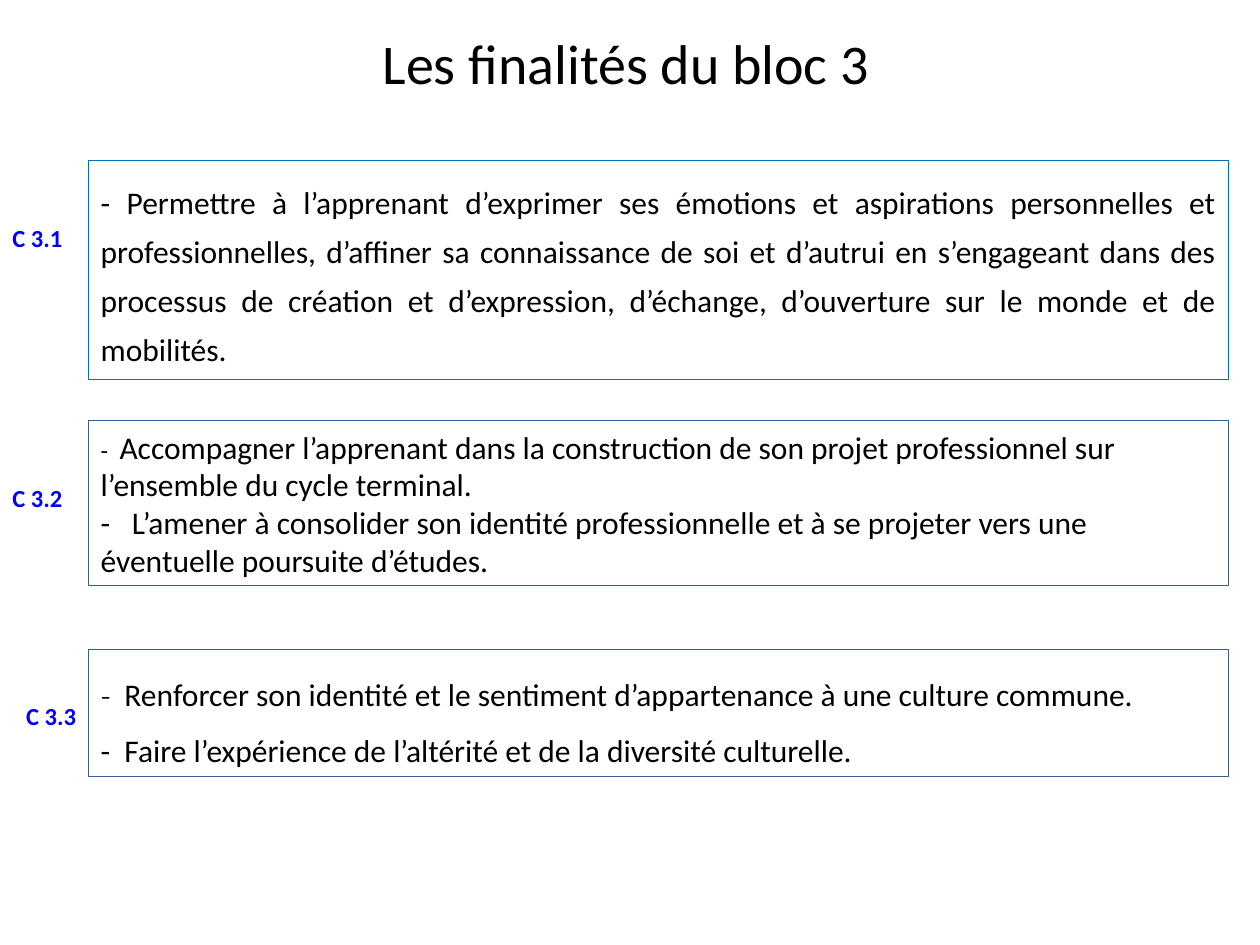
"""Build the slide presenting the aims of bloc 3, one framed text per competence."""
from lxml.etree import SubElement
from pptx import Presentation
from pptx.dml.color import RGBColor
from pptx.enum.shapes import MSO_SHAPE
from pptx.enum.text import MSO_ANCHOR, PP_ALIGN
from pptx.oxml.ns import qn
from pptx.util import Cm, Pt

COLOURS = {"text": "000000", "code": "0000FF", "bright": "0070C0", "dark": "376092"}
TITLE = "Les finalités du bloc 3"
AIMS = [
    {"code": "C 3.1", "code_at": (0, 4.37), "top": 3.23, "height": 4.42,
     "line": ("bright", 0.25), "align": PP_ALIGN.JUSTIFY, "spacing": 1.3,
     "items": [("- ", 18, "Calibri", None,
                "Permettre à l’apprenant d’exprimer ses émotions et aspirations "
                "personnelles et professionnelles, d’affiner sa connaissance de soi et "
                "d’autrui en s’engageant dans des processus de création et d’expression, "
                "d’échange, d’ouverture sur le monde et de mobilités.")]},
    {"code": "C 3.2", "code_at": (0, 9.6), "top": 8.48, "height": 3.33,
     "line": ("dark", 0.75), "align": PP_ALIGN.LEFT, "spacing": 1.0,
     "items": [("-\t", 14, "Calibri", 0.38,
                "Accompagner l’apprenant dans la construction de son projet "
                "professionnel sur l’ensemble du cycle terminal."),
               ("-\t", 18, "Calibri", 0.63,
                "L’amener à consolider son identité professionnelle et à se projeter "
                "vers une éventuelle poursuite d’études.")]},
    {"code": "C 3.3", "code_at": (0.28, 14), "top": 13.08, "height": 2.57,
     "line": ("dark", 0.25), "align": PP_ALIGN.JUSTIFY, "spacing": 1.5,
     "items": [("-\t", 18, "Cambria", 0.48,
                "Renforcer son identité et le sentiment d’appartenance à une culture "
                "commune."),
               ("-\t", 18, "Calibri", 0.48,
                "Faire l’expérience de l’altérité et de la diversité culturelle.")]},
]
FRAME_LEFT, FRAME_WIDTH = 1.78, 22.99


def colour(name):
    return RGBColor.from_string(COLOURS[name])


def style(font, size, name="text", face="Calibri", bold=False):
    font.name, font.size, font.bold = face, Pt(size), bold
    font.color.rgb = colour(name)


def add_label(slide, text, box, size, name="text", bold=False, align=PP_ALIGN.LEFT):
    frame = slide.shapes.add_textbox(*map(Cm, box)).text_frame
    frame.word_wrap = True
    frame.vertical_anchor = MSO_ANCHOR.MIDDLE
    label = frame.paragraphs[0]
    label.text, label.alignment = text, align
    style(label.font, size, name, bold=bold)


def add_tab_stop(paragraph, position):
    tabs = SubElement(paragraph._p.get_or_add_pPr(), qn("a:tabLst"))
    SubElement(tabs, qn("a:tab"), pos=str(Cm(position)), algn="l")


def add_aim(slide, aim):
    box = slide.shapes.add_shape(MSO_SHAPE.RECTANGLE, Cm(FRAME_LEFT), Cm(aim["top"]),
                                 Cm(FRAME_WIDTH), Cm(aim["height"]))
    box.shadow.inherit = False
    box.fill.background()
    line_colour, line_width = aim["line"]
    box.line.color.rgb, box.line.width = colour(line_colour), Pt(line_width)
    frame = box.text_frame
    frame.word_wrap = True
    frame.vertical_anchor = MSO_ANCHOR.MIDDLE
    for number, (dash, dash_size, dash_face, tab, sentence) in enumerate(aim["items"]):
        item = frame.add_paragraph() if number else frame.paragraphs[0]
        item.alignment, item.line_spacing = aim["align"], aim["spacing"]
        if tab:
            add_tab_stop(item, tab)
        for text, size, face in ((dash, dash_size, dash_face), (sentence, 18, "Calibri")):
            run = item.add_run()
            run.text = text
            style(run.font, size, face=face)
    add_label(slide, aim["code"], (*aim["code_at"], 1.78, 0.86), 14, "code", bold=True)


def main():
    deck = Presentation()
    deck.slide_width, deck.slide_height = Cm(25.4), Cm(19.05)
    slide = deck.slides.add_slide(deck.slide_layouts[6])
    add_label(slide, TITLE, (1.24, 0, 22.76, 2.5), 32, align=PP_ALIGN.CENTER)
    for aim in AIMS:
        add_aim(slide, aim)
    deck.save("out.pptx")


if __name__ == "__main__":
    main()
